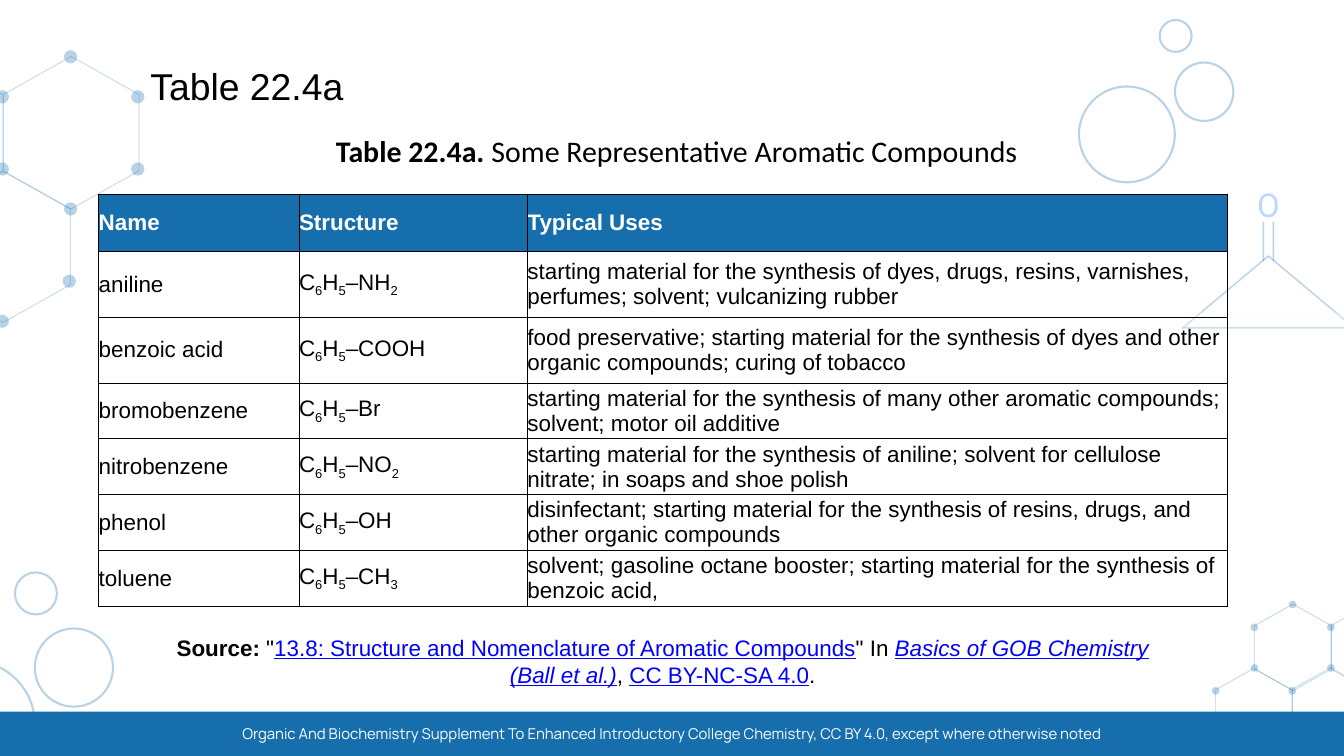
"""Build the slide with the table of representative aromatic compounds."""
from itertools import groupby

from lxml import etree
from pptx import Presentation
from pptx import util as u
from pptx.dml.color import RGBColor
from pptx.enum import shapes, text
from pptx.oxml import ns

BLUE, BLACK, WHITE, LINK = "166FAC", "000000", "FFFFFF", "0000FF"
KINDS = shapes.MSO_SHAPE
CENTER, LEFT = text.PP_ALIGN.CENTER, text.PP_ALIGN.LEFT
MIDDLE, TOP = text.MSO_ANCHOR.MIDDLE, text.MSO_ANCHOR.TOP


def color(value):
    return RGBColor.from_string(value)


def fade(element, percent=30):
    for tint in list(element.iter(ns.qn("a:srgbClr"))):
        etree.SubElement(tint, ns.qn("a:alpha"), val=str(percent * 1000))


class Slide:
    def __init__(self, deck):
        self.page = deck.slides.add_slide(deck.slide_layouts[1])
        self.items = self.page.shapes
        self.font = "Arial"

    def style(self, shape, fill=None, line=None, weight=1, faded=True):
        shape.shadow.inherit = False
        if fill:
            shape.fill.solid()
            shape.fill.fore_color.rgb = color(fill)
        else:
            shape.fill.background()
        if line:
            shape.line.color.rgb = color(line)
            shape.line.width = u.Pt(weight)
        else:
            shape.line.fill.background()
        if faded:
            fade(shape._element.spPr)

    def shape(self, kind, left, top, width, height, **look):
        shape = self.items.add_shape(kind, *map(u.Pt, (left, top, width, height)))
        self.style(shape, **look)

    def circle(self, x, y, size, **look):
        self.shape(KINDS.OVAL, x - size / 2, y - size / 2, size, size, **look)

    def hexagon(self, x, y, radius):
        half, side = radius * 0.89, radius / 2
        corners = [(0, -radius), (half, -side), (half, side),
                   (0, radius), (-half, side), (-half, -side)]
        points = [(u.Pt(x + dx), u.Pt(y + dy)) for dx, dy in corners]
        outline = self.items.build_freeform(*points[0], scale=1.0)
        outline.add_line_segments(points[1:], close=True)
        self.style(outline.convert_to_shape(), line=BLUE, weight=0.75)

    def line(self, x1, y1, x2, y2, weight):
        line = self.items.add_connector(shapes.MSO_CONNECTOR.STRAIGHT, *map(u.Pt, (x1, y1, x2, y2)))
        line.line.color.rgb = color(BLUE)
        line.line.width = u.Pt(weight)
        fade(line._element.spPr)
        etree.SubElement(line._element.spPr, ns.qn("a:effectLst"))

    def span(self, para, words, size, tint=BLACK, font=None, bold=False, italic=False, underline=False):
        span = para.add_run()
        span.text = words
        span.font.name = font or self.font
        span.font.size = u.Pt(size)
        span.font.color.rgb = color(tint)
        span.font.bold, span.font.italic, span.font.underline = bold, italic, underline
        return span

    def fill_box(self, box, place, spans, size, align=CENTER, anchor=TOP, **look):
        box.left, box.top, box.width, box.height = map(u.Pt, place)
        frame = box.text_frame
        frame.word_wrap = True
        frame.auto_size = text.MSO_AUTO_SIZE.NONE
        frame.vertical_anchor = anchor
        para = frame.paragraphs[0]
        para.alignment = align
        for words, extra in spans:
            self.span(para, words, size, **{**look, **extra})
        return para

    def title(self, words, place):
        self.fill_box(self.items.title, place, [(words, {})], 40, LEFT, MIDDLE)

    def body(self, spans, place):
        para = self.fill_box(self.page.placeholders[1], place, spans, 24)
        props = para._p.get_or_add_pPr()
        props.set("marL", "0")
        props.set("indent", "0")
        etree.SubElement(props, ns.qn("a:buNone"))

    def label(self, spans, place, size, **look):
        box = self.items.add_textbox(0, 0, 0, 0)
        return box, self.fill_box(box, place, spans, size, **look)

    def cell(self, cell, words, header, formula):
        cell.margin_left = cell.margin_right = cell.margin_top = cell.margin_bottom = 0
        cell.vertical_anchor = MIDDLE
        para = cell.text_frame.paragraphs[0]
        parts = ["".join(part) for _, part in groupby(words, str.isdigit)] if formula else [words]
        for part in parts:
            span = self.span(para, part, 24, WHITE if header else BLACK, bold=header)
            if part.isdigit():
                span._r.get_or_add_rPr().set("baseline", "-25000")
        props = cell._tc.get_or_add_tcPr()
        for side in ("lnL", "lnR", "lnT", "lnB"):
            edge = etree.SubElement(props, ns.qn("a:" + side), w=str(u.Pt(1)))
            paint = etree.SubElement(edge, ns.qn("a:solidFill"))
            etree.SubElement(paint, ns.qn("a:srgbClr"), val=BLACK)
        if header:
            cell.fill.solid()
            cell.fill.fore_color.rgb = color(BLUE)
        else:
            cell.fill.background()

    def table(self, rows, left, top, widths, heights):
        size = map(u.Pt, (left, top, sum(widths), sum(heights)))
        table = self.items.add_table(len(rows), len(widths), *size).table
        table.horz_banding = False
        for column, width in zip(table.columns, widths):
            column.width = u.Pt(width)
        for r, (row, height) in enumerate(zip(rows, heights)):
            table.rows[r].height = u.Pt(height)
            for c, words in enumerate(row):
                self.cell(table.cell(r, c), words, header=r == 0, formula=r > 0 and c == 1)


COMPOUNDS = [
    ("Name", "Structure", "Typical Uses"),
    ("aniline", "C6H5–NH2", "starting material for the synthesis of dyes, drugs, resins, varnishes, "
     "perfumes; solvent; vulcanizing rubber"),
    ("benzoic acid", "C6H5–COOH", "food preservative; starting material for the synthesis of dyes and "
     "other organic compounds; curing of tobacco"),
    ("bromobenzene", "C6H5–Br", "starting material for the synthesis of many other aromatic compounds; "
     "solvent; motor oil additive"),
    ("nitrobenzene", "C6H5–NO2", "starting material for the synthesis of aniline; solvent for cellulose "
     "nitrate; in soaps and shoe polish"),
    ("phenol", "C6H5–OH", "disinfectant; starting material for the synthesis of resins, drugs, and "
     "other organic compounds"),
    ("toluene", "C6H5–CH3", "solvent; gasoline octane booster; starting material for the synthesis of "
     "benzoic acid,"),
]
LINKED = {"tint": LINK, "underline": True}
SOURCE = [
    ("Source:", {"bold": True}), (' "', {}),
    ("13.8: Structure and Nomenclature of Aromatic Compounds", LINKED), ('" In ', {}),
    ("Basics of GOB Chemistry (Ball et al.)", {**LINKED, "italic": True}), (", ", {}),
    ("CC BY-NC-SA 4.0", LINKED), (".", {}),
]
CAPTION = [("Table 22.4a. ", {"bold": True}), ("Some Representative Aromatic Compounds", {})]
FOOTER = ("Organic And Biochemistry Supplement To Enhanced Introductory College Chemistry, "
          "CC BY 4.0, except where otherwise noted")
HEXAGONS = [(76.3, 142.2, 81.7), (-69.5, 142.2, 81.7), (3.2, 264.6, 81),
            (1385.3, 693.7, 46.4), (1467.4, 693.7, 46.4), (1425.6, 761.8, 46.4), (1343.5, 762.5, 46.4)]
LEFT_ATOMS = [(75.6, 60.8), (147.6, 103.7), (147.6, 181.1), (2.5, 103.7), (2.5, 181.1),
              (75.6, 223.9), (74.2, 301.3), (2.5, 344.2)]
RIGHT_ATOMS = [(1385, 647.6), (1426, 672.1), (1426, 715.7), (1343.9, 672.1), (1343.9, 715.7),
               (1384.6, 740.2), (1302.5, 740.2)]
BUBBLES = [(1207.4, 144, 102.6), (1290.2, 98.3, 62.6), (1259.6, 38.5, 34.2),
           (-31, 776.2, 136.8), (79.2, 715.3, 83.8), (38.5, 635.8, 45)]


def main():
    deck = Presentation()
    deck.slide_width, deck.slide_height = u.Pt(1440), u.Pt(810)
    slide = Slide(deck)
    slide.shape(KINDS.RECTANGLE, 0, 762.5, 1440, 47.5, fill=BLUE, faded=False)
    for ring in HEXAGONS:
        slide.hexagon(*ring)
    for atoms, size in ((LEFT_ATOMS, 14.2), (RIGHT_ATOMS, 8.2)):
        for x, y in atoms:
            slide.circle(x, y, size, fill=BLUE)
    for bubble in BUBBLES:
        slide.circle(*bubble, line=BLUE, weight=2.25)
    slide.shape(KINDS.ISOSCELES_TRIANGLE, 1267.2, 274.3, 183.6, 77, line=BLUE, weight=1.5)
    slide.shape(KINDS.RECTANGLE, 1267.2, 334.8, 183.6, 23, fill="FEFEFE")
    for x in (1353.6, 1364.4):
        slide.line(x, 237.6, x, 279.4, 1.69)
    oxygen, para = slide.label([("O", {})], (1344.2, 190.8, 29.5, 46.8), 35.3, tint="267FFF", font="Roboto")
    frame = oxygen.text_frame
    frame.margin_left = frame.margin_right = frame.margin_top = frame.margin_bottom = 0
    para.line_spacing = u.Pt(49.5)
    fade(para._p)
    slide.title("Table 22.4a", (154, 46.8, 1030.3, 90))
    slide.label(CAPTION, (136, 139, 1178.6, 64.8), 32, font="Calibri")
    slide.table(COMPOUNDS, 105.8, 208.1, (214.6, 244.8, 749.5), (61.2, 70.6, 70.6) + (59.8,) * 4)
    slide.body(SOURCE, (160.6, 675.4, 1098.7, 89.3))
    slide.label([(FOOTER, {})], (223.9, 771.8, 992.2, 28.8), 16, tint=WHITE, font="Manrope", anchor=MIDDLE)
    deck.save("out.pptx")


if __name__ == "__main__":
    main()
